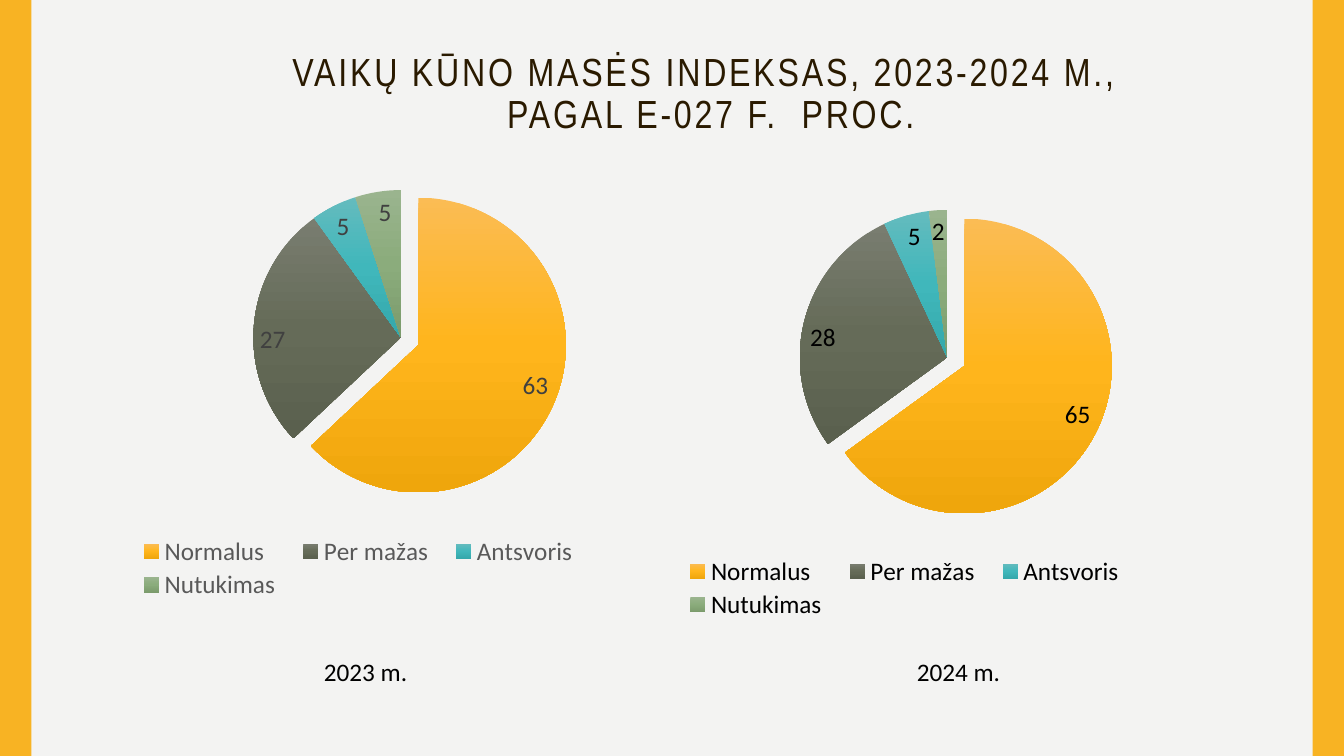
from lxml.etree import SubElement
from pptx import Presentation
from pptx.chart.data import CategoryChartData
from pptx.dml.color import RGBColor
from pptx.enum.chart import XL_CHART_TYPE, XL_LABEL_POSITION, XL_LEGEND_POSITION
from pptx.enum.shapes import MSO_SHAPE
from pptx.enum.text import MSO_ANCHOR, PP_ALIGN
from pptx.oxml.ns import qn
from pptx.util import Cm, Pt

BACKGROUND = RGBColor(0xF3, 0xF3, 0xF2)
STRIPE = RGBColor(0xF8, 0xB3, 0x23)
BROWN = RGBColor(0x2A, 0x1A, 0x00)
BLACK = RGBColor(0x00, 0x00, 0x00)
DARK_GREY = RGBColor(0x40, 0x40, 0x40)
GREY = RGBColor(0x59, 0x59, 0x59)

TITLE_LINES = ["VAIKŲ KŪNO MASĖS INDEKSAS, 2023-2024 M., ", "PAGAL E-027 F.  PROC."]
CATEGORIES = ["Normalus", "Per mažas", "Antsvoris", "Nutukimas"]
GRADIENTS = [
    ("FBBC54", "FFB51C", "EFA60C"),
    ("797D70", "656B58", "5A604E"),
    ("64BBBE", "40B7BB", "34A8AB"),
    ("9AB48E", "8BAC7C", "7B9B6C"),
]
YEARS = [
    {"caption": "2023 m.", "shares": (63, 27, 5, 5), "pie_at": (2.41, 2.9),
     "caption_left": 6.32, "label_color": DARK_GREY, "legend_color": GREY},
    {"caption": "2024 m.", "shares": (65, 28, 5, 2), "pie_at": (16.18, 3.4),
     "caption_left": 21.26, "label_color": BLACK, "legend_color": BLACK},
]

SLIDE_W, SLIDE_H, STRIPE_W = 33.87, 19.05, 0.79
PIE_W, PIE_H = 14.38, 13.51
CAPTION_TOP, CAPTION_W, CAPTION_H = 16.41, 5.79, 1.02
PLOT_LAYOUT = {"x": 0.27, "y": 0.14, "w": 0.53, "h": 0.55}
LEGEND_LAYOUT = {"x": 0.05, "y": 0.78, "w": 0.82, "h": 0.13}
EXPLOSION = 13


def style_font(font, size, color, face="Calibri"):
    font.size, font.name, font.bold = Pt(size), face, False
    font.color.rgb = color


def add_text(slide, lines, left, top, width, height, size, color, face="Calibri"):
    frame = slide.shapes.add_textbox(Cm(left), Cm(top), Cm(width), Cm(height)).text_frame
    frame.word_wrap = True
    frame.vertical_anchor = MSO_ANCHOR.TOP
    paragraph = frame.paragraphs[0]
    paragraph.alignment = PP_ALIGN.CENTER
    for number, line in enumerate(lines):
        if number:
            paragraph.add_line_break()
        run = paragraph.add_run()
        run.text = line
        style_font(run.font, size, color, face)
    return paragraph


def set_layout(layout, fractions, inner=False):
    for child in list(layout):
        layout.remove(child)
    manual = SubElement(layout, qn("c:manualLayout"))
    if inner:
        SubElement(manual, qn("c:layoutTarget")).set("val", "inner")
    for axis in "xy":
        SubElement(manual, qn(f"c:{axis}Mode")).set("val", "edge")
    for key, fraction in fractions.items():
        SubElement(manual, qn(f"c:{key}")).set("val", str(fraction))


def layout_of(parent, before):
    layout = parent.find(qn("c:layout"))
    if layout is None:
        layout = SubElement(parent, qn("c:layout"))
        parent.find(qn(before)).addprevious(layout)
    return layout


def fill_slice(point, colors):
    fill = point.format.fill
    fill.gradient()
    fill.gradient_angle = 270
    stops = point.format.fill._xPr.find(qn("a:gradFill")).find(qn("a:gsLst"))
    for stop in list(stops):
        stops.remove(stop)
    for number, color in enumerate(colors):
        stop = SubElement(stops, qn("a:gs"), pos=str(number * 50000))
        SubElement(stop, qn("a:srgbClr"), val=color)
    point.format.line.fill.background()


def add_pie(slide, year):
    pie_data = CategoryChartData()
    pie_data.categories = CATEGORIES
    pie_data.add_series("Series 1", year["shares"])
    left, top = year["pie_at"]
    chart = slide.shapes.add_chart(XL_CHART_TYPE.PIE, Cm(left), Cm(top),
                                   Cm(PIE_W), Cm(PIE_H), pie_data).chart
    chart.has_title = False
    style_font(chart.font, 10, BLACK)

    chart.has_legend = True
    legend = chart.legend
    legend.position = XL_LEGEND_POSITION.BOTTOM
    legend.include_in_layout = False
    style_font(legend.font, 18, year["legend_color"])
    set_layout(layout_of(legend._element, "c:overlay"), LEGEND_LAYOUT)

    plot = chart.plots[0]
    plot.vary_by_categories = True
    set_layout(layout_of(plot._element.getparent(), "c:pieChart"), PLOT_LAYOUT, inner=True)
    plot.has_data_labels = True
    labels = plot.data_labels
    labels.show_value = True
    labels.show_percentage = False
    labels.position = XL_LABEL_POSITION.INSIDE_END
    style_font(labels.font, 18, year["label_color"])

    series = plot.series[0]
    for number, colors in enumerate(GRADIENTS):
        fill_slice(series.points[number], colors)
    first_slice = series._element.find(qn("c:dPt"))
    explosion = SubElement(first_slice, qn("c:explosion"))
    explosion.set("val", str(EXPLOSION))
    first_slice.find(qn("c:spPr")).addprevious(explosion)


def main():
    deck = Presentation()
    deck.slide_width, deck.slide_height = Cm(SLIDE_W), Cm(SLIDE_H)
    slide = deck.slides.add_slide(deck.slide_layouts[6])
    slide.background.fill.solid()
    slide.background.fill.fore_color.rgb = BACKGROUND

    for left in (0, SLIDE_W - STRIPE_W):
        stripe = slide.shapes.add_shape(MSO_SHAPE.RECTANGLE, Cm(left), 0,
                                        Cm(STRIPE_W), Cm(SLIDE_H))
        stripe.shadow.inherit = False
        stripe.fill.solid()
        stripe.fill.fore_color.rgb = STRIPE
        stripe.line.fill.background()

    title = add_text(slide, TITLE_LINES, 4.09, 1.19, 27.66, 1.98, 28, BROWN, "Arial Narrow")
    title.line_spacing = 0.9
    for run in title.runs:
        run.font._element.set("spc", "200")

    for year in YEARS:
        add_pie(slide, year)
        add_text(slide, [year["caption"]], year["caption_left"], CAPTION_TOP,
                 CAPTION_W, CAPTION_H, 18, BLACK)

    deck.save("out.pptx")


if __name__ == "__main__":
    main()
